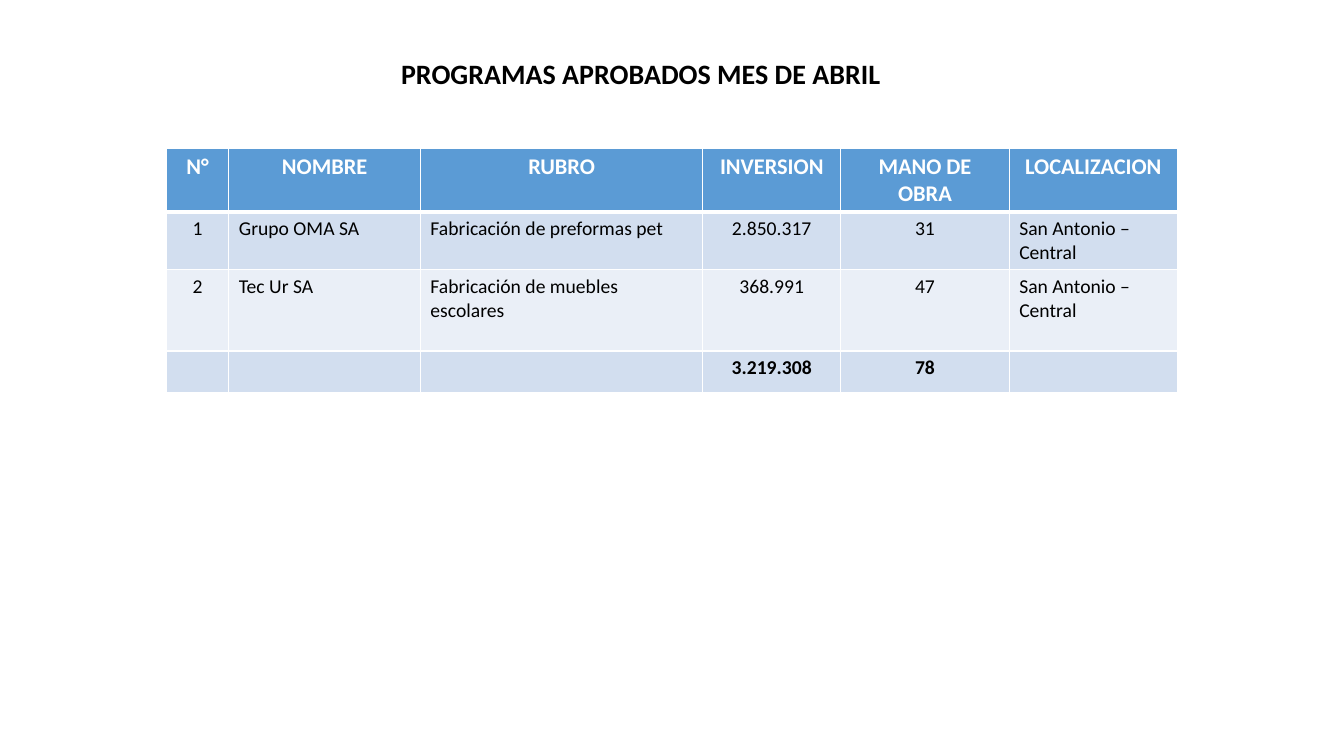
from lxml import etree
from pptx import Presentation
from pptx import util as u
from pptx.dml import color
from pptx.enum import text
from pptx.oxml import ns


class Deck:
    """Holds the style and the current slide, placing elements on a grid of 0.1 inch cells."""

    FONT = "Calibri"
    COLORS = {"ink": "000000", "paper": "FFFFFF", "head": "5B9BD5", "odd": "D2DEEF", "even": "EAEFF7"}

    def __init__(self):
        self.prs = Presentation()
        self.prs.slide_width = u.Inches(13.33)
        self.prs.slide_height = u.Inches(7.5)
        self.slide = self.prs.slides.add_slide(self.prs.slide_layouts[6])

    def grid(self, *cells):
        return [u.Inches(n / 10) for n in cells]

    def rgb(self, name):
        return color.RGBColor.from_string(self.COLORS[name])

    def label(self, tf, words, size, bold=False, ink="ink", center=False):
        p = tf.paragraphs[0]
        p.text = words
        p.alignment = text.PP_ALIGN.CENTER if center else text.PP_ALIGN.LEFT
        p.font.name, p.font.size, p.font.bold = self.FONT, u.Pt(size), bold
        p.font.color.rgb = self.rgb(ink)

    def title(self, words, box):
        tf = self.slide.shapes.add_textbox(*self.grid(*box)).text_frame
        tf.word_wrap = False
        tf.auto_size = text.MSO_AUTO_SIZE.SHAPE_TO_FIT_TEXT
        self.label(tf, words, 20, bold=True)

    def border(self, cell, side, width):
        ln = etree.SubElement(cell._tc.get_or_add_tcPr(), ns.qn("a:ln" + side), w=str(u.Pt(width)))
        fill = etree.SubElement(ln, ns.qn("a:solidFill"))
        etree.SubElement(fill, ns.qn("a:srgbClr"), val=self.COLORS["paper"])

    def table(self, rows, left, top, widths, heights, centered):
        box = self.grid(left, top, sum(widths), sum(heights))
        table = self.slide.shapes.add_table(len(rows), len(widths), *box).table
        for column, width in zip(table.columns, self.grid(*widths)):
            column.width = width
        for row, height in zip(table.rows, self.grid(*heights)):
            row.height = height
        last = len(rows) - 1
        for i, row in enumerate(rows):
            for j, words in enumerate(row):
                cell = table.cell(i, j)
                for side in "LRTB":
                    thick = (i, side) in ((0, "B"), (1, "T"))
                    self.border(cell, side, 3 if thick else 1)
                cell.fill.solid()
                cell.fill.fore_color.rgb = self.rgb("head" if i == 0 else "odd" if i % 2 else "even")
                self.label(cell.text_frame, words, 14 if i else 16, i in (0, last),
                           "ink" if i else "paper", i == 0 or j in centered)

    def save(self):
        self.prs.save("out.pptx")


def main():
    deck = Deck()
    deck.title("PROGRAMAS APROBADOS MES DE ABRIL", (38.8, 5.1, 50, 4.4))
    programs = [
        ("N°", "NOMBRE", "RUBRO", "INVERSION", "MANO DE OBRA", "LOCALIZACION"),
        ("1", "Grupo OMA SA", "Fabricación de preformas pet", "2.850.317", "31", "San Antonio – Central"),
        ("2", "Tec Ur SA", "Fabricación de muebles escolares", "368.991", "47", "San Antonio – Central"),
        ("", "", "", "3.219.308", "78", ""),
    ]
    deck.table(programs, 16.5, 14.7, (6.2, 19, 28, 13.7, 16.7, 16.7), (6.2, 5.7, 8.1, 4.1), (0, 3, 4))
    deck.save()


if __name__ == "__main__":
    main()
